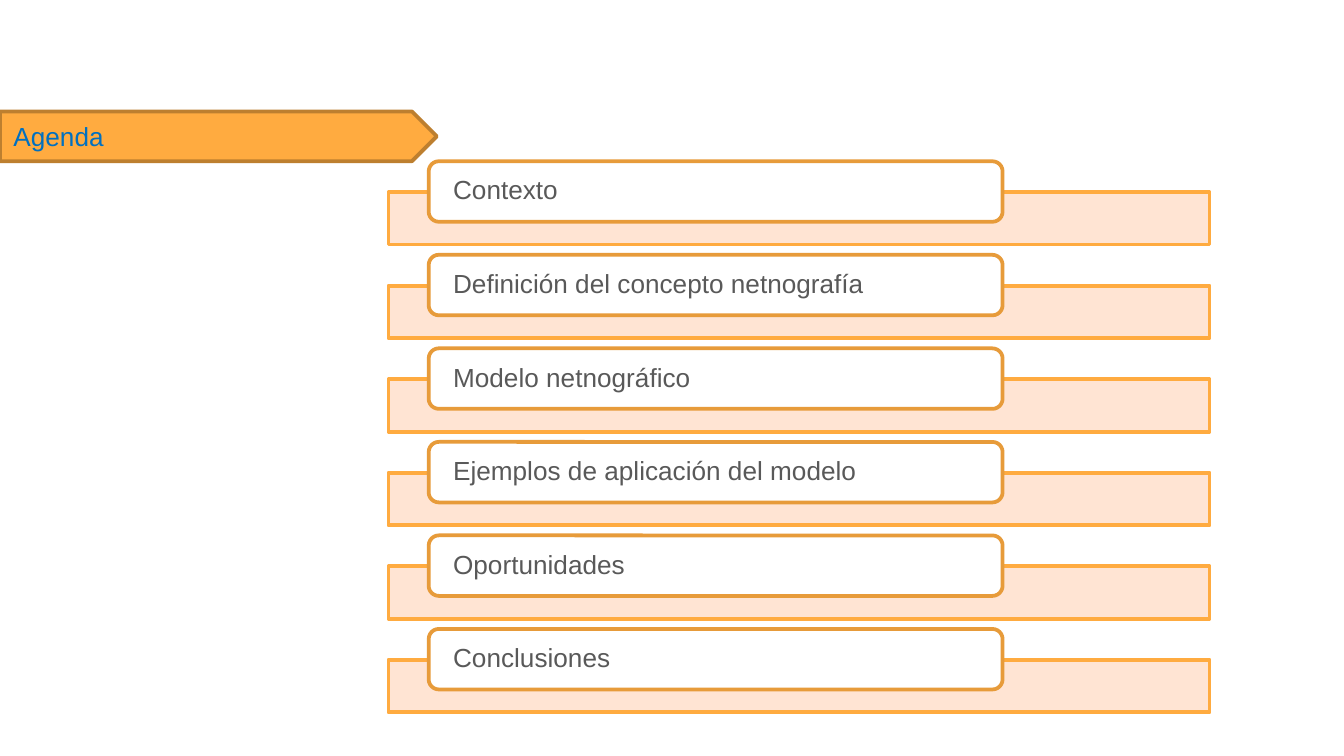
import pptx
import pptx.util
import pptx.dml.color
import pptx.enum.shapes
import pptx.enum.text
import pptx.oxml.ns
import lxml.etree

Inches = pptx.util.Inches
Pt = pptx.util.Pt
SHAPE = pptx.enum.shapes.MSO_SHAPE

TOPICS = [
    "Contexto",
    "Definición del concepto netnografía",
    "Modelo netnográfico",
    "Ejemplos de aplicación del modelo",
    "Oportunidades",
    "Conclusiones",
]
FIRST_TOP = 1.2
LAST_TOP = 4.68
PITCH = (LAST_TOP - FIRST_TOP) / (len(TOPICS) - 1)


def rgb(value):
    return pptx.dml.color.RGBColor.from_string(value)


def write(sp, text, color="595959", size=14, font="Arial", inset=0.16, spacing=1.0):
    tf = sp.text_frame
    tf.word_wrap = True
    tf.auto_size = pptx.enum.text.MSO_AUTO_SIZE.NONE
    tf.vertical_anchor = pptx.enum.text.MSO_ANCHOR.MIDDLE
    tf.margin_left = tf.margin_right = Inches(inset)
    tf.margin_top = tf.margin_bottom = 0
    p = tf.paragraphs[0]
    p.alignment = pptx.enum.text.PP_ALIGN.LEFT
    p.line_spacing = spacing
    r = p.add_run()
    r.text = text
    r.font.name = font
    r.font.size = Pt(size)
    r.font.color.rgb = rgb(color)


class Deck:
    accent = "FFAB40"
    line_width = 2

    def __init__(self, width, ratio):
        self.prs = pptx.Presentation()
        self.prs.slide_width = Inches(width)
        self.prs.slide_height = Inches(width / ratio)
        self.s = self.prs.slides.add_slide(self.prs.slide_layouts[5])

    def shape(self, kind, box, fill, line, alpha=None):
        sp = self.s.shapes.add_shape(kind, *map(Inches, box))
        sp.shadow.inherit = False
        sp.fill.solid()
        sp.fill.fore_color.rgb = rgb(fill)
        sp.line.color.rgb = rgb(line)
        sp.line.width = Pt(self.line_width)
        if alpha is not None:
            qn = pptx.oxml.ns.qn
            clr = sp.element.spPr.find(qn("a:solidFill")).find(qn("a:srgbClr"))
            lxml.etree.SubElement(clr, qn("a:alpha"), val=str(alpha * 1000))
        return sp

    def title(self, text, box):
        plate = self.shape(SHAPE.PENTAGON, box, self.accent, "BD7F2F")
        sp = self.s.shapes.title
        sp.left, sp.top, sp.width, sp.height = map(Inches, box)
        write(sp, text, color="0070C0", inset=0.1)
        plate.element.addnext(sp.element)

    def topic(self, text, top):
        self.shape(SHAPE.RECTANGLE, (2.89, top + 0.23, 6.11, 0.39),
                   "FFE2CF", self.accent, alpha=90)
        card = self.shape(SHAPE.ROUNDED_RECTANGLE, (3.19, top, 4.27, 0.45),
                          "FFFFFF", "E79B3A")
        write(card, text, spacing=0.9)


def main():
    deck = Deck(10, 16 / 9)
    for i, text in enumerate(TOPICS):
        deck.topic(text, FIRST_TOP + i * PITCH)
    deck.title("Agenda", (0, 0.83, 3.25, 0.37))
    deck.prs.save("out.pptx")


if __name__ == "__main__":
    main()
